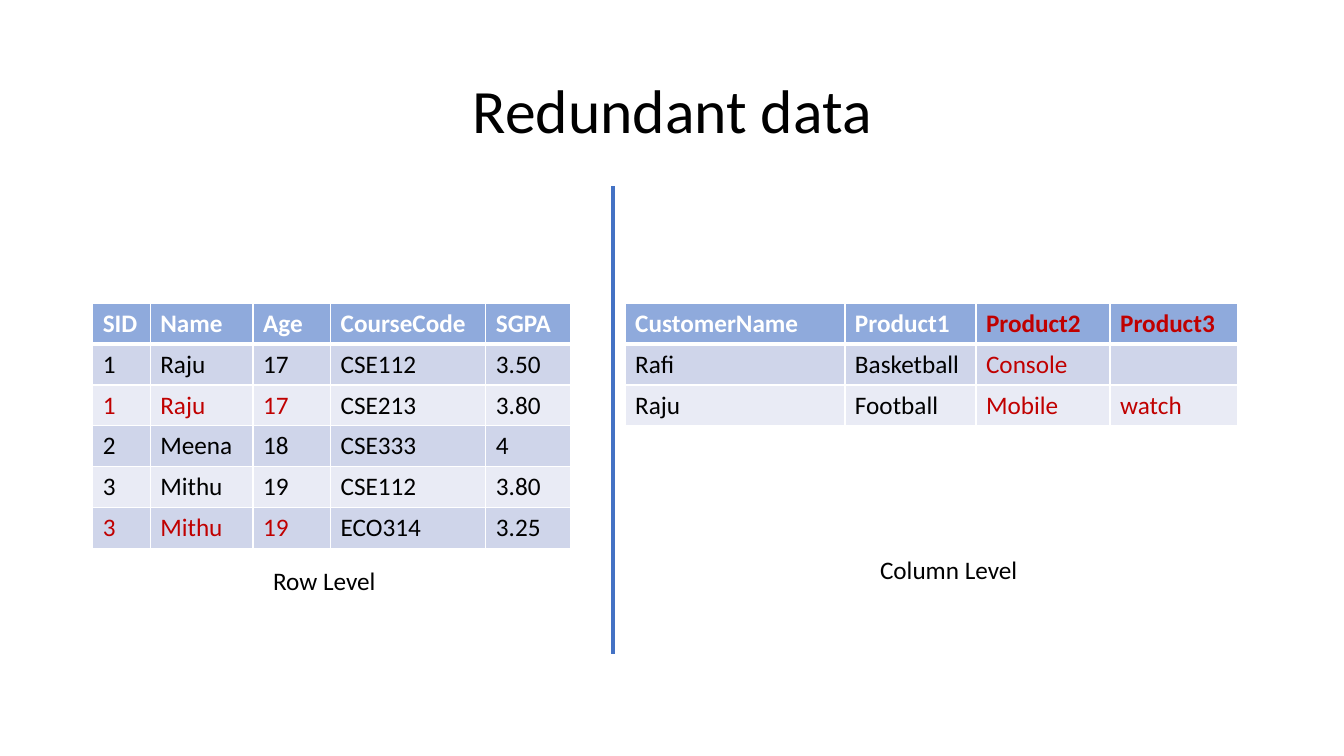
from lxml import etree
from pptx import Presentation
from pptx.dml.color import RGBColor
from pptx.enum.shapes import MSO_CONNECTOR
from pptx.enum.text import MSO_ANCHOR, MSO_AUTO_SIZE, PP_ALIGN
from pptx.oxml.ns import qn
from pptx.util import Inches, Pt

STRAIGHT = MSO_CONNECTOR.STRAIGHT
CENTER = PP_ALIGN.CENTER
MIDDLE = MSO_ANCHOR.MIDDLE
FIT_SHAPE = MSO_AUTO_SIZE.SHAPE_TO_FIT_TEXT

FONT = "Calibri"
COLORS = {
    "text": "000000",
    "white": "FFFFFF",
    "redundant": "C00000",
    "header": "8FAADC",
    "odd": "CFD5EA",
    "even": "E9EBF5",
    "divider": "4472C4",
}

TITLE = "Redundant data"
ROW_HEIGHT = 0.405
TABLE_TOP = 3.01
TABLES = [
    {
        "left": 0.92,
        "widths": [0.57, 1.02, 0.77, 1.54, 0.84],
        "rows": [
            ["SID", "Name", "Age", "CourseCode", "SGPA"],
            ["1", "Raju", "17", "CSE112", "3.50"],
            ["1", "Raju", "17", "CSE213", "3.80"],
            ["2", "Meena", "18", "CSE333", "4"],
            ["3", "Mithu", "19", "CSE112", "3.80"],
            ["3", "Mithu", "19", "ECO314", "3.25"],
        ],
        "redundant": {(r, c) for r in (2, 5) for c in range(3)},
    },
    {
        "left": 6.2,
        "widths": [2.18, 1.3, 1.33, 1.27],
        "rows": [
            ["CustomerName", "Product1", "Product2", "Product3"],
            ["Rafi", "Basketball", "Console", ""],
            ["Raju", "Football", "Mobile", "watch"],
        ],
        "redundant": {(r, c) for r in range(3) for c in (2, 3)},
    },
]
CAPTIONS = [
    ("Row Level", 2.61, 5.56, 1.23),
    ("Column Level", 8.63, 5.45, 1.58),
]


def rgb(name):
    return RGBColor.from_string(COLORS[name])


def style(p, size, color="text", bold=False):
    for r in p.runs:
        r.font.name = FONT
        r.font.size = Pt(size)
        r.font.bold = bold
        r.font.color.rgb = rgb(color)


def add_text(slide, text, box, size):
    tf = slide.shapes.add_textbox(*map(Inches, box)).text_frame
    tf.text = text
    style(tf.paragraphs[0], size)
    return tf


def set_borders(cell, top, bottom):
    tcPr = cell._tc.get_or_add_tcPr()
    sides = [("a:lnL", 1), ("a:lnR", 1), ("a:lnT", top), ("a:lnB", bottom)]
    for i, (tag, width) in enumerate(sides):
        ln = etree.Element(qn(tag), w=str(Pt(width)))
        fill = etree.SubElement(ln, qn("a:solidFill"))
        etree.SubElement(fill, qn("a:srgbClr"), val=COLORS["white"])
        tcPr.insert(i, ln)


def add_grid(slide, left, widths, rows, redundant):
    table = slide.shapes.add_table(
        len(rows), len(widths), Inches(left), Inches(TABLE_TOP),
        Inches(sum(widths)), Inches(ROW_HEIGHT * len(rows)),
    ).table
    for column, width in zip(table.columns, widths):
        column.width = Inches(width)
    for r, row in enumerate(rows):
        header = r == 0
        band = "header" if header else "odd" if r % 2 else "even"
        for c, text in enumerate(row):
            cell = table.cell(r, c)
            cell.text = text
            color = "redundant" if (r, c) in redundant else "white" if header else "text"
            style(cell.text_frame.paragraphs[0], 18, color, header)
            cell.fill.solid()
            cell.fill.fore_color.rgb = rgb(band)
            set_borders(cell, 3 if r == 1 else 1, 3 if header else 1)


def main():
    prs = Presentation()
    prs.slide_width, prs.slide_height = Inches(13.33), Inches(7.5)
    slide = prs.slides.add_slide(prs.slide_layouts[6])

    tf = add_text(slide, TITLE, (0.92, 0.4, 11.5, 1.45), 44)
    tf.word_wrap = True
    tf.vertical_anchor = MIDDLE
    tf.paragraphs[0].alignment = CENTER
    tf.paragraphs[0].line_spacing = 0.9

    for table in TABLES:
        add_grid(slide, **table)

    for text, left, top, width in CAPTIONS:
        tf = add_text(slide, text, (left, top, width, 0.4), 18)
        tf.word_wrap = False
        tf.auto_size = FIT_SHAPE

    divider = slide.shapes.add_connector(
        STRAIGHT, Inches(6.08), Inches(1.85), Inches(6.08), Inches(6.49))
    divider.line.color.rgb = rgb("divider")
    divider.line.width = Pt(3)
    etree.SubElement(divider._element.spPr, qn("a:effectLst"))

    prs.save("out.pptx")


if __name__ == "__main__":
    main()
